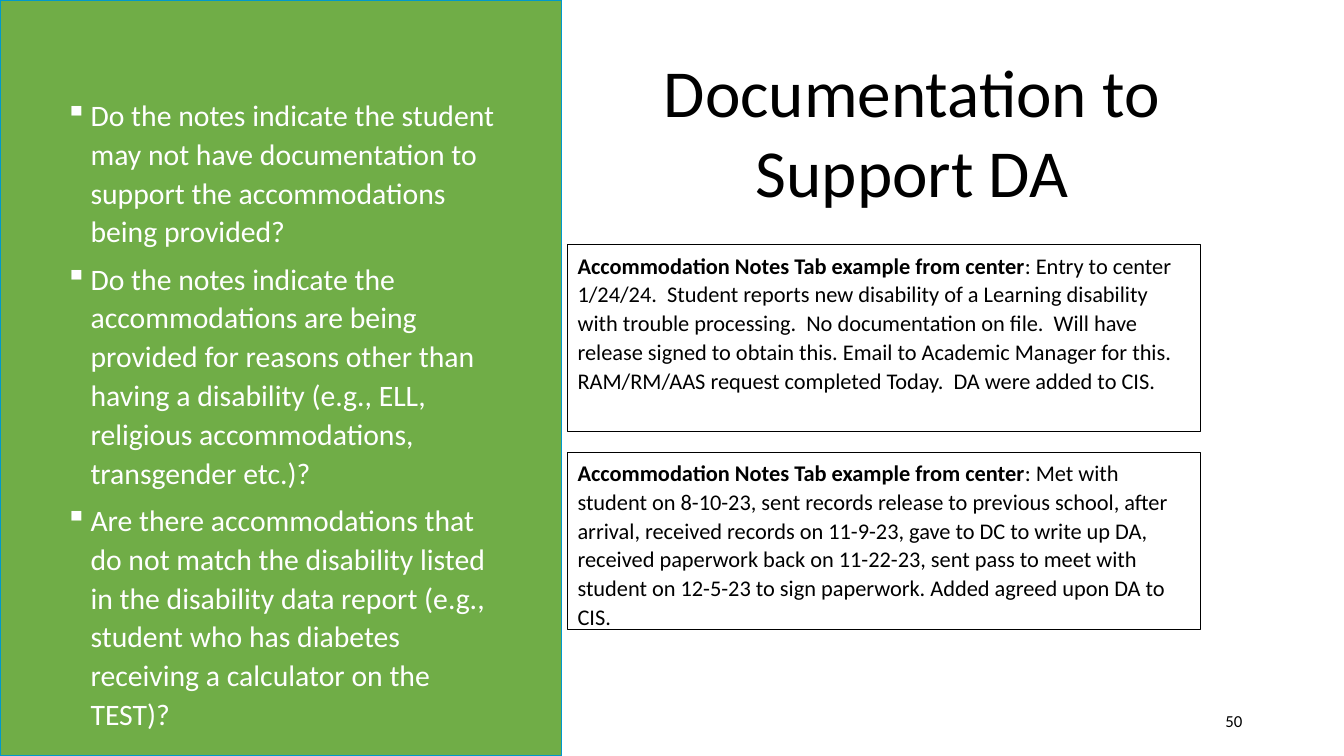
from dataclasses import dataclass

from lxml import etree
from pptx import Presentation
from pptx.dml.color import RGBColor as RGB
from pptx.enum.shapes import MSO_SHAPE as SHAPE
from pptx.enum.text import MSO_ANCHOR as ANCHOR, PP_ALIGN as ALIGN
from pptx.oxml.ns import qn
from pptx.util import Inches, Pt


@dataclass(frozen=True)
class Theme:
    font: str = "Calibri"
    text: str = "000000"
    light: str = "FFFFFF"
    panel: str = "70AD47"
    panel_line: str = "0099CC"
    title_size: float = 48
    bullet_size: float = 21.2
    note_size: float = 16
    number_size: float = 12


class SlideBuilder:
    def __init__(self, slide, theme):
        self.s, self.theme = slide, theme

    def paragraph(self, tf, runs, size, color, first=True, **formats):
        """Write (text, bold) runs as one paragraph."""
        p = tf.paragraphs[0] if first else tf.add_paragraph()
        for name, value in formats.items():
            setattr(p, name, value)
        for text, bold in runs:
            r = p.add_run()
            r.text = text
            r.font.color.rgb = RGB.from_string(color)
            font = {"name": self.theme.font, "size": Pt(size), "bold": bold}
            for name, value in font.items():
                setattr(r.font, name, value)
        return p

    def text_box(self, box, anchor=ANCHOR.TOP):
        tf = self.s.shapes.add_textbox(*map(Inches, box)).text_frame
        tf.word_wrap, tf.vertical_anchor = True, anchor
        return tf

    def label(self, box, text, size, align):
        tf = self.text_box(box, ANCHOR.MIDDLE)
        self.paragraph(tf, [(text, False)], size, self.theme.text, alignment=align)

    def rect(self, box, fill, line, width):
        sp = self.s.shapes.add_shape(SHAPE.RECTANGLE, *map(Inches, box))
        sp.shadow.inherit = False
        sp.fill.solid()
        sp.fill.fore_color.rgb = RGB.from_string(fill)
        sp.line.color.rgb = RGB.from_string(line)
        sp.line.width = Pt(width)
        return sp

    def bullets(self, box, items):
        t = self.theme
        tf = self.text_box(box)
        for i, item in enumerate(items):
            p = self.paragraph(tf, [(item, False)], t.bullet_size, t.light, i == 0,
                               line_spacing=1.09, space_before=Pt(6))
            # Hanging indent and square bullet
            pPr = p._p.get_or_add_pPr()
            pPr.set("marL", str(Inches(0.25)))
            pPr.set("indent", str(-Inches(0.25)))
            color = etree.SubElement(pPr, qn("a:buClr"))
            etree.SubElement(color, qn("a:srgbClr"), val=t.light)
            etree.SubElement(pPr, qn("a:buChar"), char="▪")

    def note(self, box, heading, body):
        t = self.theme
        tf = self.rect(box, t.light, t.text, 0.75).text_frame
        tf.word_wrap, tf.vertical_anchor = True, ANCHOR.TOP
        self.paragraph(tf, [(heading, True), (body, False)], t.note_size, t.text,
                       alignment=ALIGN.LEFT, line_spacing=1.07, space_after=Pt(8))


QUESTIONS = [
    "Do the notes indicate the student may not have documentation to support "
    "the accommodations being provided?",
    "Do the notes indicate the accommodations are being provided for reasons other "
    "than having a disability (e.g., ELL, religious accommodations, transgender etc.)?",
    "Are there accommodations that do not match the disability listed in the disability "
    "data report (e.g., student who has diabetes receiving a calculator on the TEST)?",
]
NOTE_HEADING = "Accommodation Notes Tab example from center"
# Top, height and body of each example
NOTES = [
    (2.43, 1.85,
     ": Entry to center 1/24/24.  Student reports new disability of a Learning "
     "disability with trouble processing.  No documentation on file.  Will have release "
     "signed to obtain this. Email to Academic Manager for this. RAM/RM/AAS request "
     "completed Today.  DA were added to CIS."),
    (4.49, 1.76,
     ": Met with student on 8-10-23, sent records release to previous school, after "
     "arrival, received records on 11-9-23, gave to DC to write up DA, received "
     "paperwork back on 11-22-23, sent pass to meet with student on 12-5-23 to sign "
     "paperwork. Added agreed upon DA to CIS."),
]


def main():
    prs = Presentation()
    prs.slide_width, prs.slide_height = Inches(13.33), Inches(7.5)
    theme = Theme()
    b = SlideBuilder(prs.slides.add_slide(prs.slide_layouts[6]), theme)

    # Question panel
    b.rect((0, 0, 5.57, 7.5), theme.panel, theme.panel_line, 1)
    b.bullets((0.55, 0.88, 4.63, 6.07), QUESTIONS)

    # Title and slide number
    b.label((5.68, 0.49, 6.73, 1.61), "Documentation to Support DA",
            theme.title_size, ALIGN.CENTER)
    b.label((9.42, 6.95, 3, 0.4), "50", theme.number_size, ALIGN.RIGHT)

    # Example notes
    for top, height, body in NOTES:
        b.note((5.63, top, 6.28, height), NOTE_HEADING, body)

    prs.save("out.pptx")


if __name__ == "__main__":
    main()
